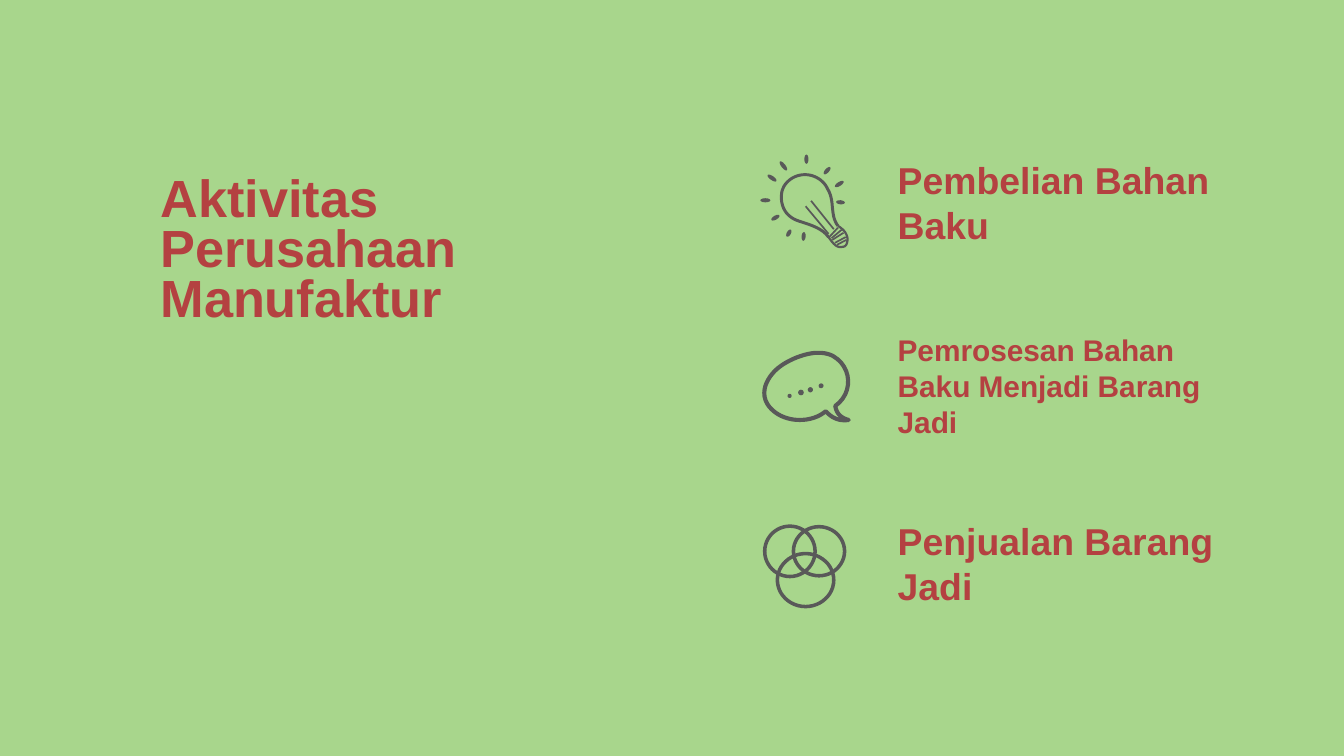
from lxml import etree
from pptx import Presentation
from pptx.dml.color import RGBColor
from pptx.enum.shapes import MSO_CONNECTOR, MSO_SHAPE
from pptx.enum.text import MSO_ANCHOR
from pptx.oxml.ns import qn
from pptx.util import Pt

OVAL = MSO_SHAPE.OVAL
STRAIGHT = MSO_CONNECTOR.STRAIGHT
TOP, BOTTOM = MSO_ANCHOR.TOP, MSO_ANCHOR.BOTTOM

COLORS = {"background": "A8D68C", "text": "B44141", "icon": "595959"}
FONT = "Arial"
ICON_LEFT, LABEL_LEFT, LABEL_WIDTH = 407.5, 473.8, 183.6
CURVE_STEPS = 12
ARC = 0.55  # Bezier handle length for a quarter circle

# Icon geometry in points from the icon's top left corner.
# Curves: a start point, then Bezier segments (two controls and an end).
GLASS = [(41.4, 38.2),
         (39.2, 35.3), (38.9, 32.4), (38.5, 28.8),
         (38.2, 25.2), (37.8, 21.6), (36, 18.7),
         (33.8, 13.7), (28.8, 10.8), (23.8, 10.8),
         (18, 10.8), (13, 14.4), (11.5, 19.4),
         (10.1, 25.2), (12.2, 31), (16.6, 33.8),
         (20.2, 36.7), (31.7, 37.4), (36.4, 44.3)]
SOCKET = [(36.4, 44.3),
          (38, 46.5), (40, 49.5), (42.5, 49.6),
          (44, 49.4), (45.5, 49.8), (46.2, 47.5),
          (47.4, 43.5), (45, 40.5), (41.4, 38.2)]
BULB_LINES = [(27, 24.8, 39.2, 40), (24.1, 27.7, 36.4, 42.5),
              (36.4, 44.6, 41.4, 39.2), (38, 44.8, 43.4, 40.3),
              (38.4, 45.7, 44.4, 41.9), (39.8, 47.3, 45.6, 44.2),
              (41, 48.3, 46, 45.7)]
# Rays: centre x, centre y, length, angle
RAYS = [(42.1, 15.8, 5.4, -32), (35.6, 8.6, 5, -48), (24.5, 2.5, 5, 90),
        (12.2, 6.1, 6, 52), (6.1, 12.6, 5.8, 35), (2.5, 24.5, 5.4, 0),
        (7.9, 33.8, 5, -30), (15.1, 42.1, 4.3, -60), (23, 43.9, 4.7, 95),
        (42.8, 25.6, 4.7, 5)]
BUBBLE = [(30.6, 1.5),
          (33.5, 1.5), (36.4, 1.9), (38.9, 3.3),
          (49, 9.1), (49.7, 23.1), (40, 30),
          (40.7, 34.3), (43.2, 36.4), (47.2, 37.5),
          (41.8, 38.2), (38.2, 36.4), (34.9, 32.8),
          (31, 36.1), (25.9, 37.5), (20.9, 37.5),
          (14.1, 37.5), (7.2, 34.6), (3.6, 28.9),
          (-1.1, 21), (5.4, 12.7), (9.7, 9.4),
          (14.4, 5.5), (23.8, 1.5), (30.6, 1.5)]
# Dots: centre x, centre y, diameter
DOTS = [(15.5, 24.6, 2.2), (21.6, 22.8, 3), (26.6, 21.3, 2.8), (32.4, 19.2, 2.6)]
# Rings: left, top, width, height
RINGS = [(2.2, 1.1, 27, 27), (17.6, 1.4, 27.4, 26.3), (9, 15.8, 30.2, 28.4)]


def rgb(name):
    return RGBColor.from_string(COLORS[name])


def stroke(line, width):
    line.color.rgb = rgb("icon")
    line.width = Pt(width)


def add_oval(shapes, x, y, w, h, rotation=0):
    sp = shapes.add_shape(OVAL, Pt(x), Pt(y), Pt(w), Pt(h))
    sp.shadow.inherit = False
    sp.rotation = rotation
    sp.fill.solid()
    sp.fill.fore_color.rgb = rgb("icon")
    sp.line.fill.background()


def ring_curve(left, top, w, h):
    """Bezier points of an ellipse in the given box."""
    unit = [(1, 0), (1, ARC), (ARC, 1), (0, 1), (-ARC, 1), (-1, ARC), (-1, 0),
            (-1, -ARC), (-ARC, -1), (0, -1), (ARC, -1), (1, -ARC), (1, 0)]
    return [(left + w / 2 * (1 + u), top + h / 2 * (1 + v)) for u, v in unit]


def flatten(points):
    """Points along a chain of cubic Bezier segments."""
    vertices = []
    for i in range(0, len(points) - 1, 3):
        segment = points[i:i + 4]
        for step in range(1, CURVE_STEPS + 1):
            t = step / CURVE_STEPS
            weights = ((1 - t) ** 3, 3 * t * (1 - t) ** 2, 3 * t * t * (1 - t), t ** 3)
            vertices.append([Pt(sum(k * pt[axis] for k, pt in zip(weights, segment)))
                             for axis in (0, 1)])
    return vertices


def add_curves(shapes, x, y, curves, width, close=False):
    """One outline shape made of one or more curves."""
    starts = [(Pt(curve[0][0]), Pt(curve[0][1])) for curve in curves]
    builder = shapes.build_freeform(*starts[0])
    for i, curve in enumerate(curves):
        if i:
            builder.move_to(*starts[i])
        builder.add_line_segments(flatten(curve), close=close)
    sp = builder.convert_to_shape(Pt(x), Pt(y))
    sp.shadow.inherit = False
    sp.fill.background()
    stroke(sp.line, width)


def add_bulb(s, x, y):
    shapes = s.shapes.add_group_shape().shapes
    add_curves(shapes, x, y, [GLASS], 1.6)
    add_curves(shapes, x, y, [SOCKET], 1.2)
    # Filament and screw thread
    for x1, y1, x2, y2 in BULB_LINES:
        line = shapes.add_connector(STRAIGHT, Pt(x + x1), Pt(y + y1), Pt(x + x2), Pt(y + y2))
        etree.SubElement(line._element.spPr, qn("a:effectLst"))
        stroke(line.line, 0.9)
    for cx, cy, length, angle in RAYS:
        add_oval(shapes, x + cx - length / 2, y + cy - 1.1, length, 2.2, angle)


def add_bubble(s, x, y):
    shapes = s.shapes.add_group_shape().shapes
    add_curves(shapes, x, y, [BUBBLE], 2.2, close=True)
    for cx, cy, size in DOTS:
        add_oval(shapes, x + cx - size / 2, y + cy - size / 2, size, size)


def add_rings(s, x, y):
    add_curves(s.shapes, x, y, [ring_curve(*ring) for ring in RINGS], 1.9, close=True)


def add_text(s, x, y, w, h, text, size, spacing, anchor):
    tf = s.shapes.add_textbox(Pt(x), Pt(y), Pt(w), Pt(h)).text_frame
    tf.word_wrap = True
    tf.vertical_anchor = anchor
    tf.margin_left = tf.margin_right = tf.margin_top = tf.margin_bottom = Pt(7.2)
    p = tf.paragraphs[0]
    p.text = text
    p.line_spacing = spacing
    p.font.name, p.font.size, p.font.bold = FONT, Pt(size), True
    p.font.color.rgb = rgb("text")


def add_activity(s, y, h, text, size, draw_icon, icon_top):
    add_text(s, LABEL_LEFT, y, LABEL_WIDTH, h, text, size, 1.0, BOTTOM)
    draw_icon(s, ICON_LEFT, icon_top)


def main():
    prs = Presentation()
    prs.slide_width, prs.slide_height = Pt(720), Pt(405)
    s = prs.slides.add_slide(prs.slide_layouts[6])
    s.background.fill.solid()
    s.background.fill.fore_color.rgb = rgb("background")

    # Title
    add_text(s, 79, 87.8, 189.4, 251.3, "Aktivitas Perusahaan Manufaktur", 28, 0.8, TOP)

    # Activities
    add_activity(s, 66.2, 73.4, "Pembelian Bahan Baku", 20, add_bulb, 82.8)
    add_activity(s, 187.9, 54.7, "Pemrosesan Bahan Baku Menjadi Barang Jadi", 16,
                 add_bubble, 187.5)
    add_activity(s, 290.9, 41.8, "Penjualan Barang Jadi", 20, add_rings, 280.8)

    prs.save("out.pptx")


if __name__ == "__main__":
    main()
